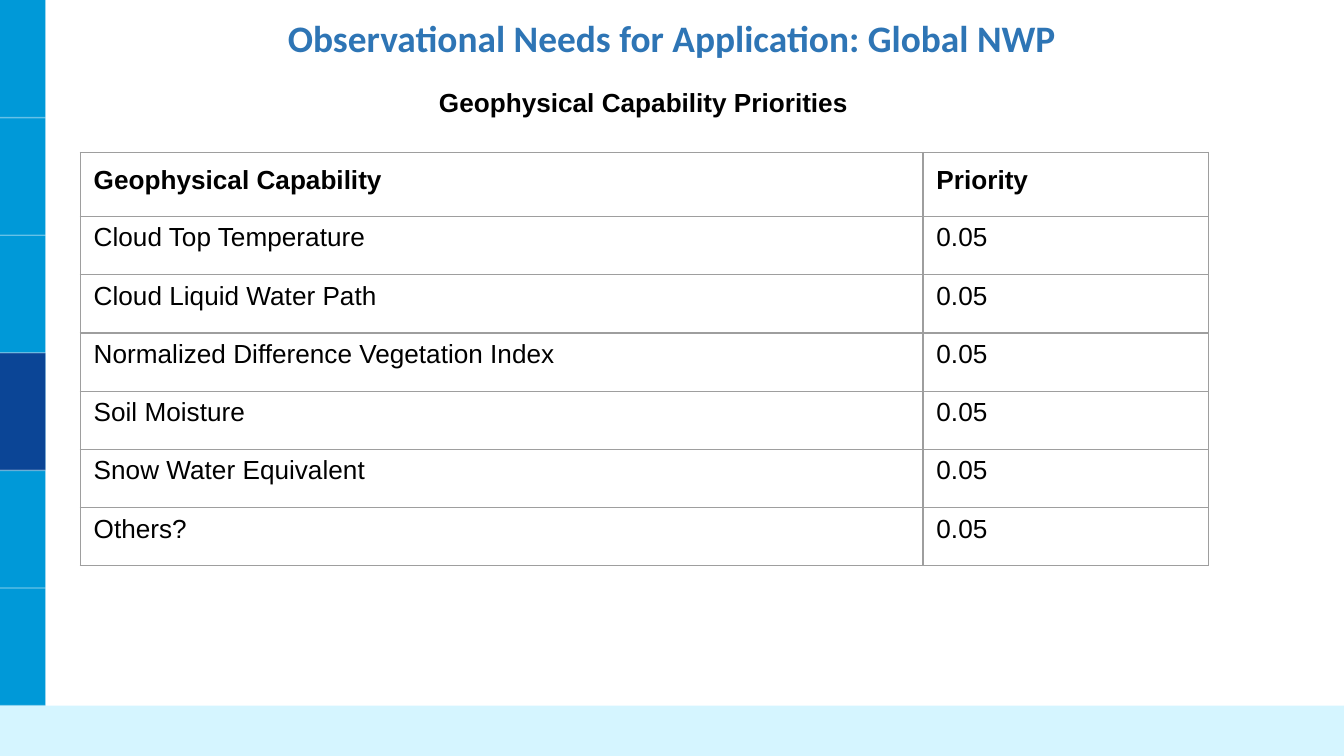
from pptx import Presentation
from pptx.dml.color import RGBColor as RGB
from pptx.enum.shapes import MSO_CONNECTOR as CONN, MSO_SHAPE as SHAPE
from pptx.enum.text import MSO_ANCHOR as ANCHOR, PP_ALIGN as ALIGN
from pptx.oxml.ns import qn
from pptx.util import Pt
from lxml.etree import SubElement as Sub

HUES = {
    "sky": "0099D8", "navy": "0B4596", "pale": "D5F5FF", "white": "FFFFFF",
    "title": "2E75B5", "ink": "000000", "grid": "9E9E9E",
}
WIDE, HIGH = 720, 405
ITEMS = [
    "Cloud Top Temperature", "Cloud Liquid Water Path",
    "Normalized Difference Vegetation Index", "Soil Moisture",
    "Snow Water Equivalent", "Others?",
]
ROWS = [("Geophysical Capability", "Priority")] + [(item, "0.05") for item in ITEMS]


def hue(name):
    """Return the named colour."""
    return RGB.from_string(HUES[name])


def write(frame, text, size=14, face="Arial", color="ink", bold=False,
          align=ALIGN.LEFT, space=None):
    """Put one formatted paragraph in a text frame."""
    para = frame.paragraphs[0]
    para.alignment, para.line_spacing = align, space
    run = para.add_run()
    run.text = text
    font = run.font
    font.size, font.name, font.bold = Pt(size), face, bold
    font.color.rgb = hue(color)


def pad(part, side, top):
    """Set the margins of a cell or text frame."""
    part.margin_left = part.margin_right = Pt(side)
    part.margin_top = part.margin_bottom = Pt(top)


def block(slide, color, x, y, w, h):
    """Draw a plain filled rectangle."""
    shape = slide.shapes.add_shape(SHAPE.RECTANGLE, Pt(x), Pt(y), Pt(w), Pt(h))
    shape.shadow.inherit = False
    shape.fill.solid()
    shape.fill.fore_color.rgb = hue(color)
    shape.line.fill.background()


def rule(slide, x, y, end, foot):
    """Draw a thin translucent white line."""
    line = slide.shapes.add_connector(CONN.STRAIGHT, Pt(x), Pt(y), Pt(end), Pt(foot))
    line.line.width = Pt(0.75)
    line.line.color.rgb = hue("white")
    props = line._element.spPr
    Sub(next(props.iter(qn("a:srgbClr"))), qn("a:alpha"), val="40000")
    Sub(props, qn("a:effectLst"))


def side_bar(slide, x, y, w, h, step=63, mark=3):
    """Draw the left bar with its marked step and dividers."""
    block(slide, "sky", x, y, w, h)
    block(slide, "navy", x, y + mark * step, w, step)
    for num in range(1, int(h // step) + 1):
        rule(slide, x, y + num * step, x + w, y + num * step)
    rule(slide, x + w, y, x + w, y + h)


def heading(slide, x, y, w, h):
    """Place the slide title."""
    title = slide.shapes.title
    title.left, title.top, title.width, title.height = Pt(x), Pt(y), Pt(w), Pt(h)
    frame = title.text_frame
    pad(frame, 5, 2.7)
    frame.vertical_anchor = ANCHOR.MIDDLE
    write(frame, "Observational Needs for Application: Global NWP", size=20,
          face="Calibri", color="title", bold=True, align=ALIGN.CENTER, space=0.9)


def caption(slide, x, y, w, h):
    """Place the centred table caption."""
    frame = slide.shapes.add_textbox(Pt(x), Pt(y), Pt(w), Pt(h)).text_frame
    frame.word_wrap = True
    pad(frame, 7.2, 7.2)
    write(frame, "Geophysical Capability Priorities", bold=True, align=ALIGN.CENTER)


def edge(cell):
    """Give a cell grey borders on all sides."""
    props = cell._tc.get_or_add_tcPr()
    for side in "LRTB":
        line = Sub(props, qn(f"a:ln{side}"), w=str(Pt(0.75)))
        Sub(Sub(line, qn("a:solidFill")), qn("a:srgbClr"), val=HUES["grid"])


def grid(slide, x, y, w, h, first=451.5, head=34.4):
    """Build the priority table."""
    table = slide.shapes.add_table(len(ROWS), 2, Pt(x), Pt(y), Pt(w), Pt(h)).table
    table.first_row = table.horz_banding = False
    for col, width in zip(table.columns, (first, w - first)):
        col.width = Pt(width)
    for num, texts in enumerate(ROWS):
        top = num == 0
        table.rows[num].height = Pt(head if top else (h - head) / len(ITEMS))
        for col, text in enumerate(texts):
            cell = table.cell(num, col)
            pad(cell, 7.2, 7.2 if top else 3.6)
            edge(cell)
            cell.fill.background()
            write(cell.text_frame, text, bold=top)


def main():
    """Build and save the slide."""
    deck = Presentation()
    deck.slide_width, deck.slide_height = Pt(WIDE), Pt(HIGH)
    slide = deck.slides.add_slide(deck.slide_layouts[5])
    side_bar(slide, 0, 0, 24.5, HIGH)
    block(slide, "pale", 0, 378, WIDE, 27)
    heading(slide, 24.5, -1, 671, 45.5)
    grid(slide, 43, 81.6, 604.5, 221.6)
    caption(slide, 56, 39, 577.5, 31.5)
    deck.save("out.pptx")


if __name__ == "__main__":
    main()
